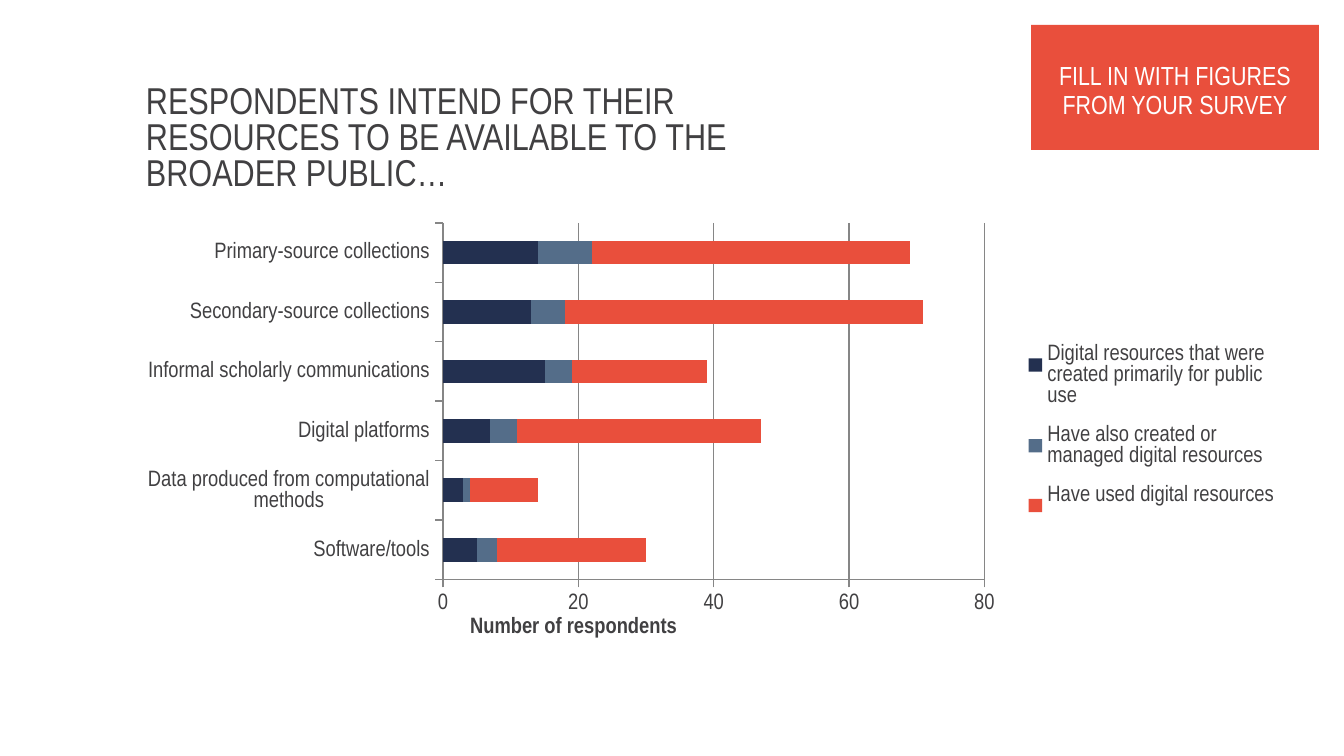
from lxml.etree import SubElement
from pptx import Presentation
from pptx.chart.data import CategoryChartData
from pptx.dml.color import RGBColor
from pptx.enum.chart import XL_CHART_TYPE as ChartType, XL_LEGEND_POSITION as LegendPosition
from pptx.enum.chart import XL_TICK_MARK as TickMark
from pptx.enum.shapes import MSO_SHAPE as ShapeType
from pptx.enum.text import MSO_ANCHOR as Anchor, PP_ALIGN as Align
from pptx.oxml.ns import qn
from pptx.util import Emu, Pt

WHITE = RGBColor(0xFF, 0xFF, 0xFF)
INK = RGBColor(0x41, 0x40, 0x42)
GRAY = RGBColor(0x86, 0x86, 0x86)
NAVY = RGBColor(0x23, 0x30, 0x50)
SLATE = RGBColor(0x54, 0x6D, 0x89)
CORAL = RGBColor(0xE9, 0x4F, 0x3C)

RESPONSES = {
    "Primary-source collections": (14, 8, 47),
    "Secondary-source collections": (13, 5, 53),
    "Informal scholarly communications": (15, 4, 20),
    "Digital platforms": (7, 4, 36),
    "Data produced from computational methods": (3, 1, 10),
    "Software/tools": (5, 3, 22),
}
SERIES = {
    "Digital resources that were created primarily for public use": NAVY,
    "Have also created or managed digital resources": SLATE,
    "Have used digital resources": CORAL,
}


class SlideBuilder:
    """Holds the style and the current slide, and adds each kind of element."""

    font_name = "Arial Narrow"
    scale = 914400 * 10 / 1344

    def __init__(self, presentation, width, height):
        presentation.slide_width = self.px(width)
        presentation.slide_height = self.px(height)
        self.slide = presentation.slides.add_slide(presentation.slide_layouts[6])

    def px(self, length):
        return Emu(round(length * self.scale))

    def box(self, bounds):
        return [self.px(length) for length in bounds]

    def apply(self, target, values):
        for name, value in values.items():
            setattr(target, name, value)

    def style_font(self, font, size, color, bold=False):
        self.apply(font, {"name": self.font_name, "size": Pt(size), "bold": bold})
        font.color.rgb = color

    def fill_text(self, shape, text, size, color, margins, frame_format, paragraph_format):
        frame = shape.text_frame
        sides = ("margin_left", "margin_top", "margin_right", "margin_bottom")
        self.apply(frame, {"word_wrap": True, **frame_format})
        self.apply(frame, dict(zip(sides, self.box(margins))))
        paragraph = frame.paragraphs[0]
        self.apply(paragraph, paragraph_format)
        run = paragraph.add_run()
        run.text = text
        self.style_font(run.font, size, color)

    def title(self, text, bounds):
        shape = self.slide.shapes.add_textbox(*self.box(bounds))
        self.fill_text(shape, text, 20, INK, (30, 0, 0, 0),
                       {"vertical_anchor": Anchor.TOP},
                       {"alignment": Align.LEFT, "line_spacing": 0.81})

    def callout(self, text, bounds):
        shape = self.slide.shapes.add_shape(ShapeType.RECTANGLE, *self.box(bounds))
        shape.shadow.inherit = False
        shape.fill.solid()
        shape.fill.fore_color.rgb = CORAL
        shape.line.fill.background()
        self.fill_text(shape, text, 14, WHITE, (13, 13, 13, 6),
                       {"vertical_anchor": Anchor.MIDDLE},
                       {"alignment": Align.CENTER, "line_spacing": 0.95})

    def place(self, element, index, target=None, **fractions):
        for old_layout in element.findall(qn("c:layout")):
            element.remove(old_layout)
        layout = element.makeelement(qn("c:layout"))
        element.insert(index, layout)
        manual = SubElement(layout, qn("c:manualLayout"))
        settings = {"layoutTarget": target} if target else {}
        settings.update(xMode="edge", yMode="edge", **fractions)
        for name, value in settings.items():
            SubElement(manual, qn(f"c:{name}")).set("val", str(value))

    def stacked_bars(self, responses, series_colors, axis_title, bounds):
        rows = list(reversed(responses.items()))
        data = CategoryChartData()
        data.categories = [category for category, _ in rows]
        for index, name in enumerate(series_colors):
            data.add_series(name, [values[index] for _, values in rows])
        frame = self.slide.shapes.add_chart(ChartType.BAR_STACKED, *self.box(bounds), data)
        chart = frame.chart
        chart.has_title = False
        self.style_font(chart.font, 12, INK)
        plot = chart.plots[0]
        self.apply(plot, {"gap_width": 150, "overlap": 100, "vary_by_categories": False})
        for series, color in zip(plot.series, series_colors.values()):
            series.format.fill.solid()
            series.format.fill.fore_color.rgb = color
        self.axes(chart, axis_title)
        chart.has_legend = True
        self.apply(chart.legend, {"position": LegendPosition.RIGHT, "include_in_layout": False})
        self.style_font(chart.legend.font, 12, INK)
        self.place(chart.legend._element, 1, x=0.77, y=0.27, w=0.23, h=0.46)
        plot_area = chart._chartSpace.chart.plotArea
        self.place(plot_area, 0, "inner", x=0.27, y=0.03, w=0.47, h=0.83)

    def axes(self, chart, axis_title):
        value_axis = chart.value_axis
        self.apply(value_axis, {"minimum_scale": 0, "maximum_scale": 80, "major_unit": 20,
                                "has_major_gridlines": True})
        for axis in (chart.category_axis, value_axis):
            self.apply(axis, {"major_tick_mark": TickMark.OUTSIDE,
                              "minor_tick_mark": TickMark.NONE})
            self.style_font(axis.tick_labels.font, 12, INK)
        for line in (chart.category_axis.format.line, value_axis.format.line,
                     value_axis.major_gridlines.format.line):
            line.color.rgb = GRAY
            line.width = Pt(0.75)
        title = value_axis.axis_title
        title.text_frame.text = axis_title
        run = title.text_frame.paragraphs[0].runs[0]
        self.style_font(run.font, 12, INK, bold=True)
        self.place(title._element, 1, x=0.29, y=0.93)


def main():
    presentation = Presentation()
    builder = SlideBuilder(presentation, 1344, 756)
    builder.title("RESPONDENTS INTEND FOR THEIR RESOURCES TO BE AVAILABLE TO THE BROADER PUBLIC…",
                  (116, 85, 663, 75))
    builder.stacked_bars(RESPONSES, SERIES, "Number of respondents", (132, 210, 1152, 434))
    builder.callout("FILL IN WITH FIGURES FROM YOUR SURVEY", (1031, 25, 288, 125))
    presentation.save("out.pptx")


if __name__ == "__main__":
    main()
